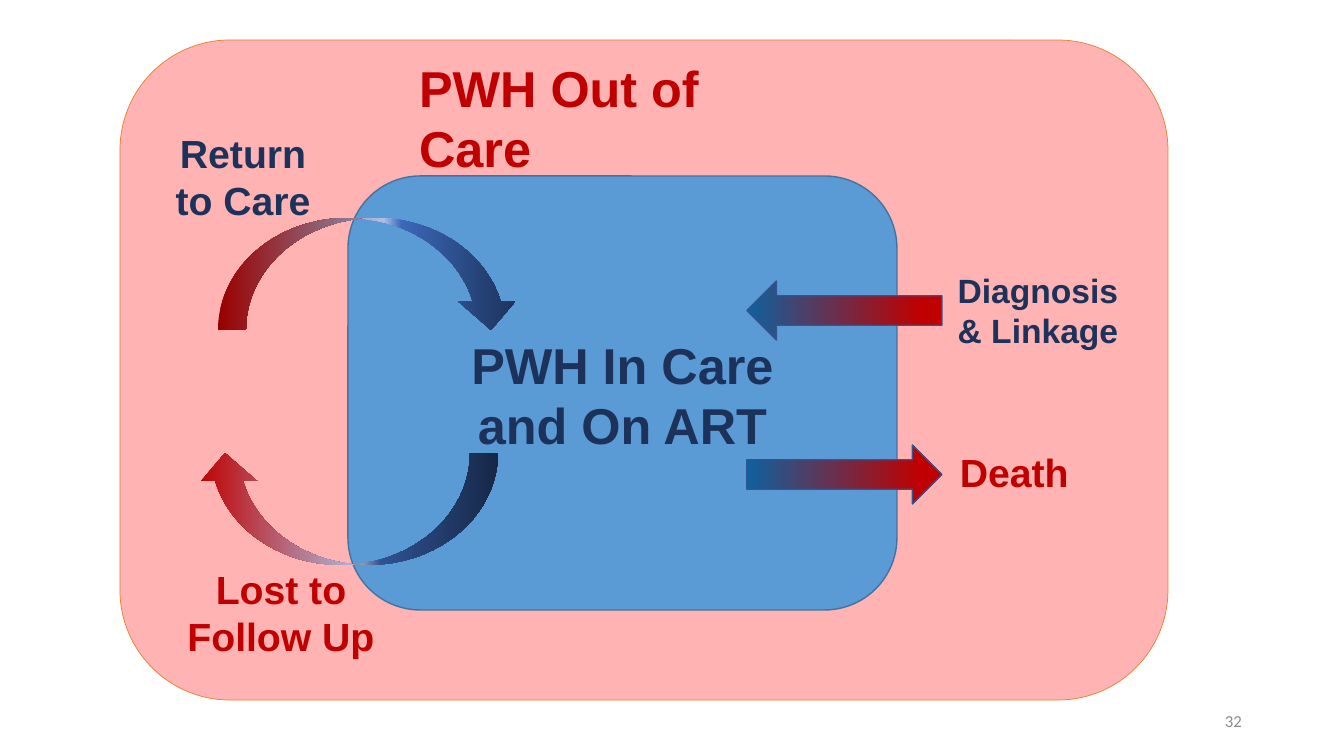
from lxml import etree
from pptx import Presentation
from pptx import util as u
from pptx.dml.color import RGBColor
from pptx.enum import shapes, text
from pptx.oxml.ns import nsdecls, qn

PX = 914400 / 100.8
RED, NAVY = "C00000", "1C325A"
ALIGN = text.PP_ALIGN


def write(box, words, size=28, color=NAVY, bold=True, font="Arial",
          align=ALIGN.CENTER, anchor=text.MSO_ANCHOR.TOP, wrap=True):
    frame = box.text_frame
    frame.auto_size = text.MSO_AUTO_SIZE.NONE
    frame.word_wrap = wrap
    frame.vertical_anchor = anchor
    paragraph = frame.paragraphs[0]
    paragraph.alignment = align
    run = paragraph.add_run()
    run.text = words
    run.font.name, run.font.size, run.font.bold = font, u.Pt(size), bold
    run.font.color.rgb = RGBColor.from_string(color)


def add_figure(kind, place, fill=None, line=None, width=1, stops=(), flip="", angle=0):
    """Add a preset shape; stops are (percent, colour) pairs, flip is any of H and V."""
    figure = slide.shapes.add_shape(kind, *[round(n * PX) for n in place])
    figure.shadow.inherit = False
    if fill:
        figure.fill.solid()
        figure.fill.fore_color.rgb = RGBColor.from_string(fill)
    else:
        marks = "".join(f'<a:gs pos="{at * 1000}"><a:srgbClr val="{color}"/></a:gs>'
                        for at, color in stops)
        gradient = etree.fromstring(
            f'<a:gradFill {nsdecls("a")} rotWithShape="1"><a:gsLst>{marks}</a:gsLst>'
            f'<a:lin ang="{angle * 60000}" scaled="0"/></a:gradFill>')
        figure._element.spPr.find(qn("a:prstGeom")).addnext(gradient)
    if line:
        figure.line.color.rgb = RGBColor.from_string(line)
        figure.line.width = u.Pt(width)
    else:
        figure.line.fill.background()
    for axis in flip:
        figure._element.spPr.find(qn("a:xfrm")).set("flip" + axis, "1")


prs = Presentation()
prs.slide_width, prs.slide_height = round(1344 * PX), round(756 * PX)
slide = prs.slides.add_slide(prs.slide_layouts[5])
kinds = shapes.MSO_SHAPE

# Out-of-care area around the in-care area
add_figure(kinds.ROUNDED_RECTANGLE, (120, 40, 1048, 660), "FFB3B3", "ED7D31", 0.5)
add_figure(kinds.ROUNDED_RECTANGLE, (348, 176, 549, 434), "5B9BD5", "43739E")

title = slide.shapes.title
title.left, title.top, title.width, title.height = [
    round(n * PX) for n in (409, 52, 426, 72)]
write(title, "PWH Out of Care", size=36, color=RED, align=ALIGN.LEFT, wrap=False)
slide.shapes._spTree.append(title._element)  # in front of the areas

# Movements between the areas
cycle = [(0, RED), (55, "ABC0E4"), (61, "3B67B7"), (100, NAVY)]
for left, top, flip, angle in [(218, 218, "", 0), (197, 453, "HV", 180)]:
    add_figure(kinds.CURVED_DOWN_ARROW, (left, top, 301, 112),
               stops=cycle, flip=flip, angle=angle)
for top, flip, angle in [(281, "", 0), (445, "H", 180)]:
    add_figure(kinds.LEFT_ARROW, (747, top, 195, 59), line="325491",
               stops=[(0, "10609D"), (89, RED)], flip=flip, angle=angle)

labels = [
    ("Return to Care", (165, 124, 156, 105), {}),
    ("Lost to Follow Up", (165, 560, 232, 105), {"color": RED}),
    ("Death", (950, 443, 129, 57), {"color": RED, "align": ALIGN.LEFT, "wrap": False}),
    ("Diagnosis & Linkage", (941, 265, 194, 92), {"size": 24}),
    ("PWH In Care and On ART", (452, 329, 341, 132), {"size": 36}),
    ("32", (950, 701, 302, 40),
     {"size": 12, "color": "8C8C8C", "bold": False, "font": "Calibri",
      "align": ALIGN.RIGHT, "anchor": text.MSO_ANCHOR.MIDDLE}),
]
for words, place, style in labels:
    write(slide.shapes.add_textbox(*[round(n * PX) for n in place]), words, **style)

prs.save("out.pptx")
